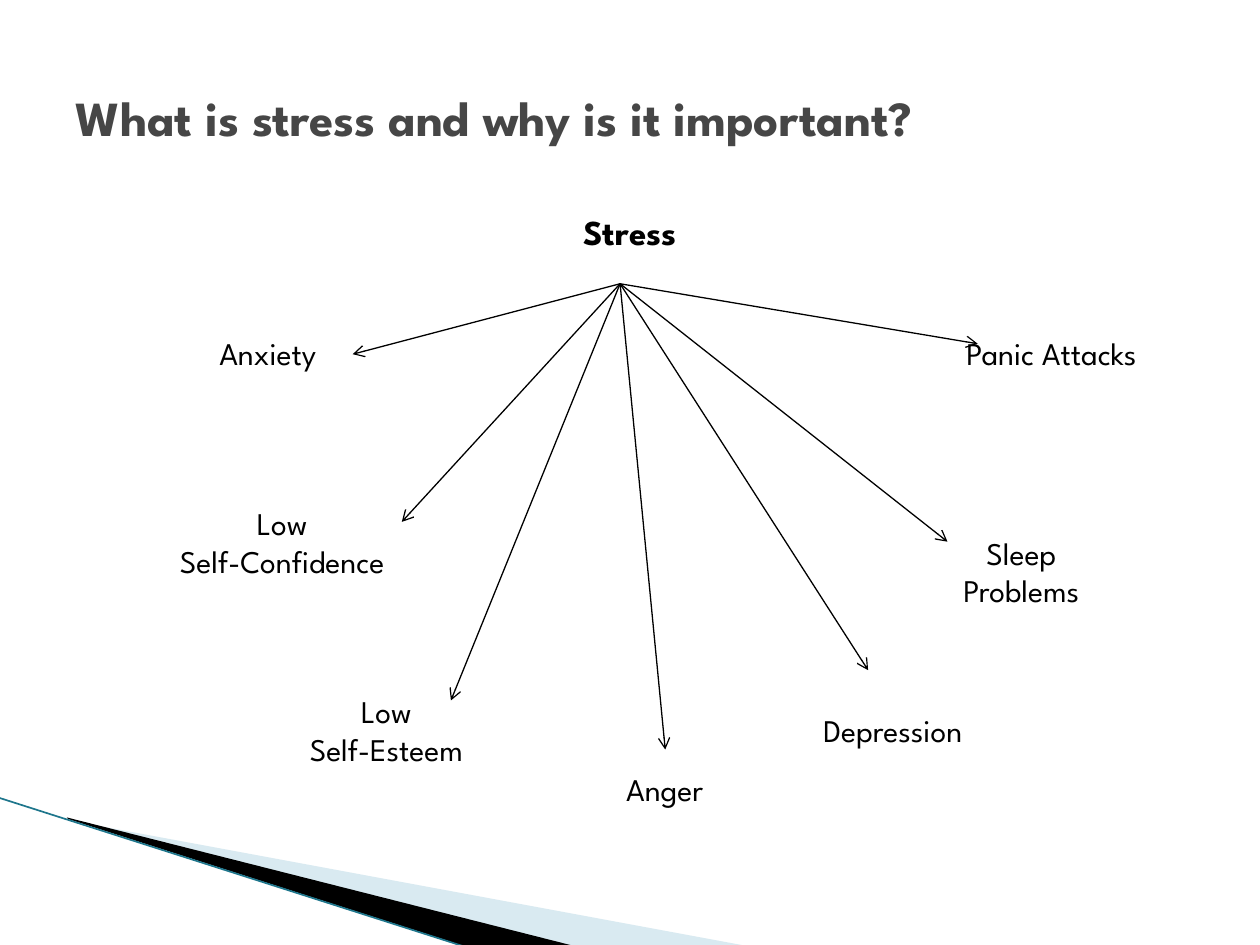
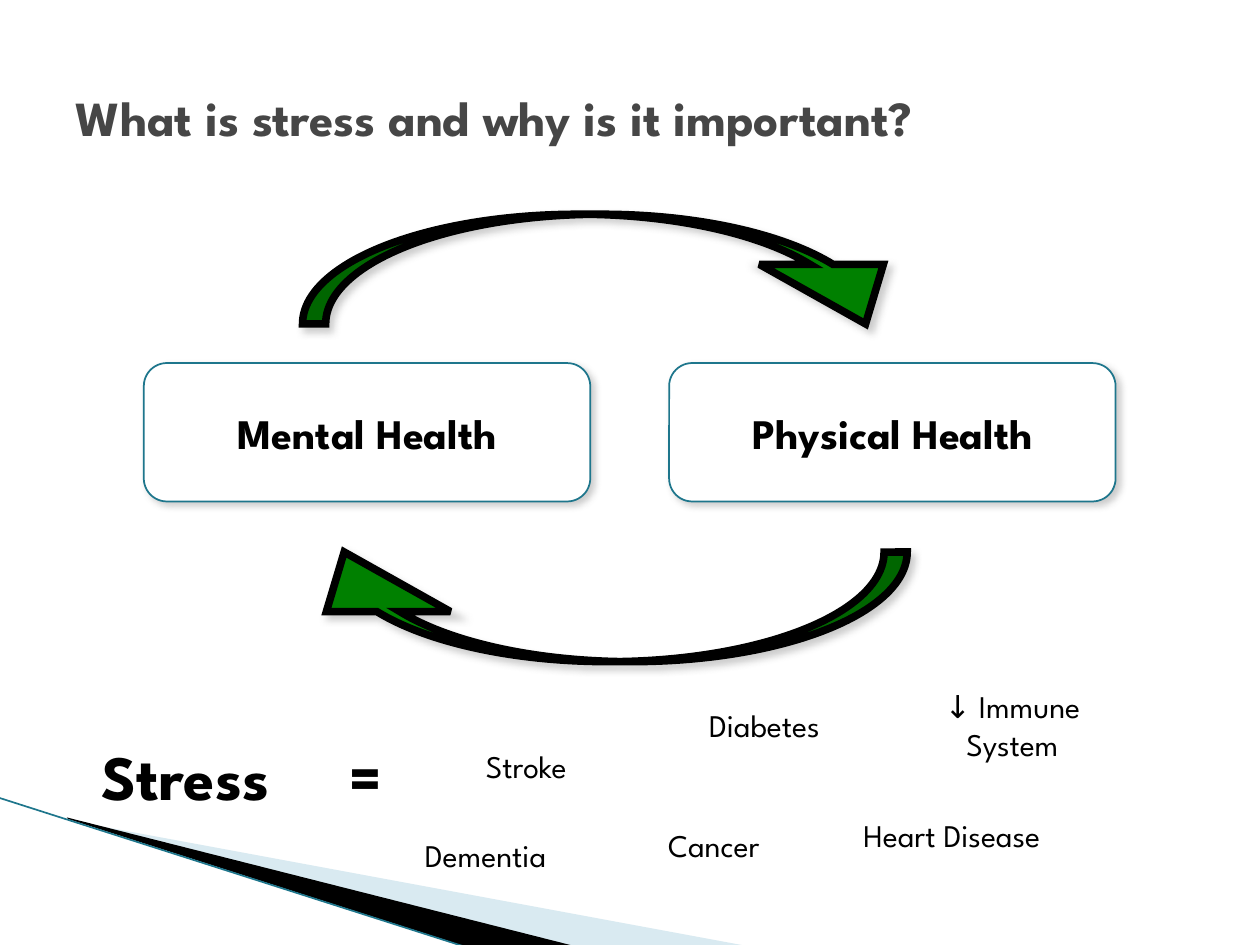
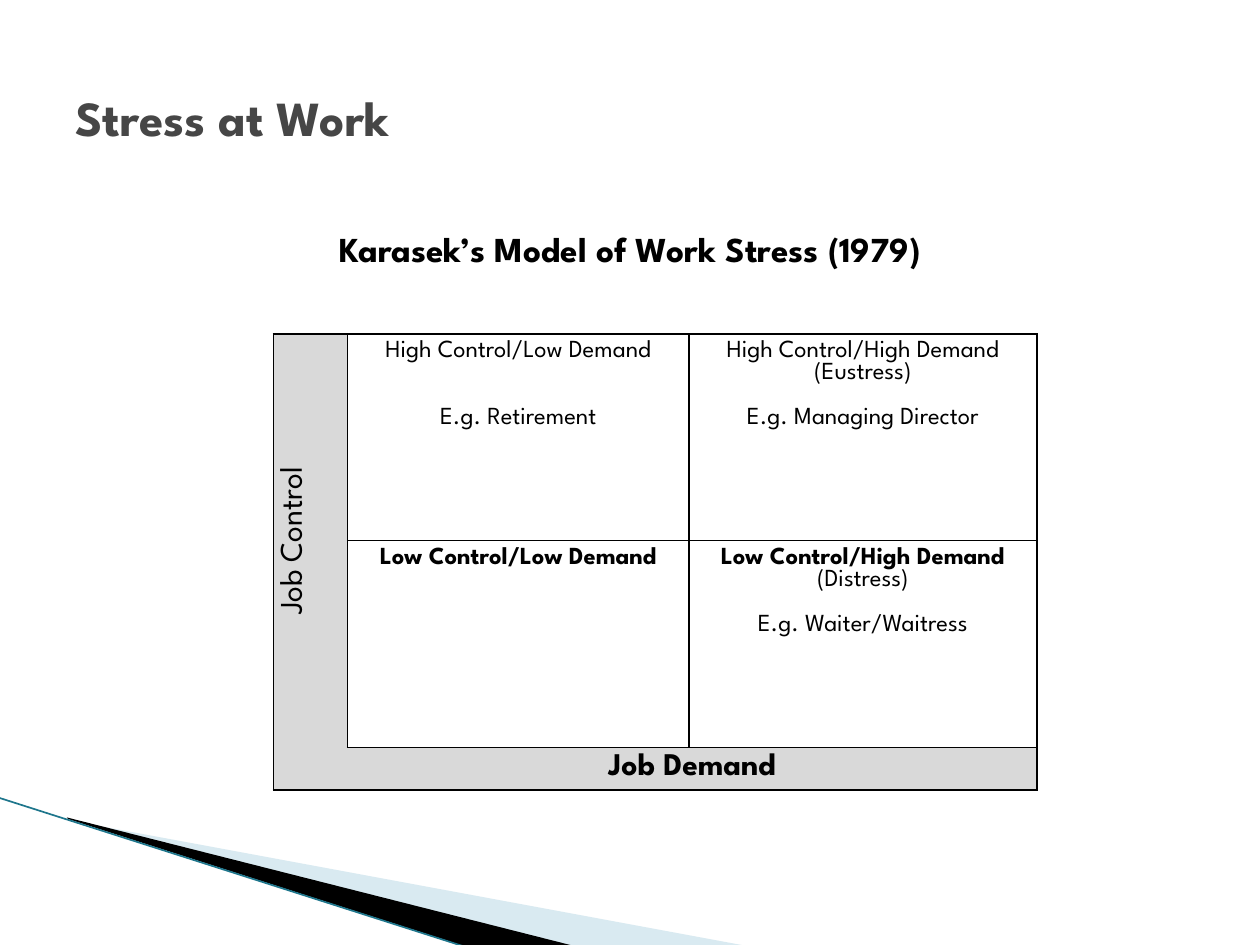
from dataclasses import dataclass

from lxml import etree
from pptx import Presentation
from pptx.dml.color import RGBColor
from pptx.enum.shapes import MSO_CONNECTOR, MSO_SHAPE
from pptx.enum.text import MSO_ANCHOR, MSO_AUTO_SIZE, PP_ALIGN
from pptx.oxml.ns import qn
from pptx.util import Cm, Pt

STRAIGHT = MSO_CONNECTOR.STRAIGHT
ROUNDED_BOX = MSO_SHAPE.ROUNDED_RECTANGLE
CURVED_ARROW = MSO_SHAPE.CURVED_DOWN_ARROW
TOP, MIDDLE = MSO_ANCHOR.TOP, MSO_ANCHOR.MIDDLE
LEFT, CENTER = PP_ALIGN.LEFT, PP_ALIGN.CENTER
NO_AUTOFIT = MSO_AUTO_SIZE.NONE
TITLE_AND_CONTENT, TITLE_ONLY = 1, 5
PLAIN_TABLE = "{2D5ABB26-0587-4C30-8999-92F81FD0307C}"


@dataclass(frozen=True)
class Theme:
    font: str = "League Spartan"
    ink: str = "000000"
    heading: str = "464646"
    paper: str = "FFFFFF"
    teal: str = "1E768C"
    pale_blue: str = "A0CBDC"
    green: str = "008000"
    grey: str = "D9D9D9"
    shadow: str = "808080"
    title_size: float = 28
    lead_size: float = 20
    label_size: float = 18
    box_size: float = 24
    stress_size: float = 36
    cell_size: float = 14
    line_height: float = 1.2
    table_line_height: float = 0.92


def rgb(value):
    return RGBColor.from_string(value)


def add_element(parent, tag, **attributes):
    return etree.SubElement(
        parent, qn(tag), {name: str(value) for name, value in attributes.items()})


class Deck:
    def __init__(self, theme):
        self.theme = theme
        self.presentation = Presentation()
        self.presentation.slide_width = Cm(25.4)
        self.presentation.slide_height = Cm(19.05)
        self.slide = None

    def add_slide(self, title, layout=TITLE_AND_CONTENT):
        layouts = self.presentation.slide_layouts
        self.slide = self.presentation.slides.add_slide(layouts[layout])
        self.add_corner_bands()
        self.fill_placeholder(self.slide.shapes.title, title, (1.27, 0.76, 22.86, 3.18),
                              self.theme.title_size, self.theme.heading, LEFT, MIDDLE)

    def add_corner_bands(self):
        theme = self.theme
        pale_band = self.add_polygon(
            [(1.4, 16.54), (15.11, 19.08), (11.58, 19.08), (1.4, 16.51)], theme.pale_blue)
        color = pale_band._element.spPr.find(qn("a:solidFill"))[0]
        add_element(color, "a:alpha", val=40000)
        self.add_polygon(
            [(1.35, 16.48), (11.61, 19.08), (9.45, 19.1), (1.37, 16.51)], theme.ink)
        self.add_line((-0.03, 16.08), (9.42, 19.1), theme.teal, 0.95)

    def add_polygon(self, points, color):
        corners = [(Cm(x), Cm(y)) for x, y in points]
        builder = self.slide.shapes.build_freeform(*corners[0])
        builder.add_line_segments(corners[1:])
        shape = builder.convert_to_shape()
        shape.shadow.inherit = False
        shape.fill.solid()
        shape.fill.fore_color.rgb = rgb(color)
        shape.line.fill.background()
        return shape

    def add_line(self, start, end, color, width):
        line = self.slide.shapes.add_connector(
            STRAIGHT, *(Cm(value) for value in (*start, *end)))
        line.line.color.rgb = rgb(color)
        line.line.width = Pt(width)
        add_element(line._element.spPr, "a:effectLst")
        return line

    def add_arrow(self, start, end):
        arrow = self.add_line(start, end, self.theme.ink, 0.75)
        add_element(arrow.line._get_or_add_ln(), "a:tailEnd", type="arrow")

    def format_paragraph(self, paragraph, size, bold=False, color=None,
                         alignment=CENTER, line_height=None):
        """Exact line spacing keeps the leading the same for every font build."""
        paragraph.alignment = alignment
        paragraph.line_spacing = Pt(round(size * (line_height or self.theme.line_height), 1))
        font = paragraph.font
        font.name = self.theme.font
        font.size = Pt(size)
        font.bold = bold
        font.color.rgb = rgb(color or self.theme.ink)

    def set_text(self, frame, text, size, tab=None, **style):
        frame.word_wrap = True
        frame.text = text
        for paragraph in frame.paragraphs:
            if tab:
                tabs = add_element(paragraph._p.get_or_add_pPr(), "a:tabLst")
                add_element(tabs, "a:tab", pos=Cm(tab), algn="l")
            self.format_paragraph(paragraph, size, **style)

    def fill_placeholder(self, shape, text, box, size, color, alignment, anchor):
        shape.left, shape.top, shape.width, shape.height = (Cm(value) for value in box)
        frame = shape.text_frame
        frame.auto_size = NO_AUTOFIT
        frame.vertical_anchor = anchor
        frame.text = text
        paragraph = frame.paragraphs[0]
        properties = paragraph._p.get_or_add_pPr()
        properties.set("marL", "0")
        properties.set("indent", "0")
        add_element(properties, "a:buNone")
        paragraph.space_before = Pt(0)
        self.format_paragraph(paragraph, size, True, color, alignment)

    def add_lead(self, text, box):
        self.fill_placeholder(self.slide.placeholders[1], text, box,
                              self.theme.lead_size, self.theme.ink, CENTER, TOP)

    def add_label(self, text, left, top, width=4.6, height=1.6, size=None, **style):
        shape = self.slide.shapes.add_textbox(Cm(left), Cm(top), Cm(width), Cm(height))
        shape.text_frame.vertical_anchor = MIDDLE
        self.set_text(shape.text_frame, text, size or self.theme.label_size, **style)

    def add_shadowed_shape(self, kind, box, fill, line, width, adjustments):
        shape = self.slide.shapes.add_shape(kind, *(Cm(value) for value in box))
        for index, value in enumerate(adjustments):
            shape.adjustments[index] = value
        shape.fill.solid()
        shape.fill.fore_color.rgb = rgb(fill)
        shape.line.color.rgb = rgb(line)
        shape.line.width = Pt(width)
        add_element(shape.line._get_or_add_ln(), "a:miter", lim=800000)
        shape.shadow.inherit = False
        effects = shape._element.spPr.find(qn("a:effectLst"))
        shadow = add_element(effects, "a:outerShdw", blurRad=Pt(4), dist=Pt(3),
                             dir=45 * 60000, algn="tl", rotWithShape=0)
        color = add_element(shadow, "a:srgbClr", val=self.theme.shadow)
        add_element(color, "a:alpha", val=40000)
        return shape

    def add_box(self, text, left, top):
        theme = self.theme
        shape = self.add_shadowed_shape(ROUNDED_BOX, (left, top, 9, 2.79),
                                        theme.paper, theme.teal, 1, [0.167])
        shape.text_frame.vertical_anchor = MIDDLE
        self.set_text(shape.text_frame, text, theme.box_size, bold=True)

    def add_curved_arrow(self, left, top, flipped=False):
        theme = self.theme
        shape = self.add_shadowed_shape(CURVED_ARROW, (left, top, 12.6, 2.21),
                                        theme.green, theme.ink, 4.33, [0.211, 1.131, 0.543])
        if flipped:
            for axis in ("flipH", "flipV"):
                shape._element.spPr.xfrm.set(axis, "1")

    def add_table(self, left, top, columns, rows):
        frame = self.slide.shapes.add_table(
            len(rows), len(columns), Cm(left), Cm(top), Cm(sum(columns)), Cm(sum(rows)))
        table = frame.table
        table.first_row = table.horz_banding = False
        table._tbl.tblPr.find(qn("a:tableStyleId")).text = PLAIN_TABLE
        for column, width in zip(table.columns, columns):
            column.width = Cm(width)
        for row, height in zip(table.rows, rows):
            row.height = Cm(height)
        return table

    def fill_cell(self, cell, lines=(("", False, 0),), size=None, sides="LRTB", fill=None):
        """Each line is its text, its weight and the number of lines left free above it."""
        theme = self.theme
        size = size or theme.cell_size
        properties = cell._tc.get_or_add_tcPr()
        for side in sides:
            border = add_element(properties, f"a:ln{side}", w=Pt(1))
            color = add_element(border, "a:solidFill")
            add_element(color, "a:srgbClr", val=theme.ink)
        if fill:
            cell.fill.solid()
            cell.fill.fore_color.rgb = rgb(fill)
        else:
            cell.fill.background()
        cell.text_frame.text = "\n".join(text for text, _, _ in lines)
        for paragraph, (_, bold, gap) in zip(cell.text_frame.paragraphs, lines):
            if gap:
                paragraph.space_before = Pt(round(gap * size * theme.table_line_height, 1))
            self.format_paragraph(paragraph, size, bold, line_height=theme.table_line_height)


def add_effects_slide(deck):
    deck.add_slide("What is stress and why is it important?")
    deck.add_lead("Stress", (1.27, 4.11, 22.86, 12.57))
    effects = [
        ("Anxiety", (3.1, 6.32), (7.11, 7.14)),
        ("Low\nSelf-Confidence", (2.69, 9.93, 6, 2), (8.1, 10.52)),
        ("Low\nSelf-Esteem", (5.49, 13.92), (9.09, 14.12)),
        ("Anger", (11.1, 15.11), (13.41, 15.11)),
        ("Depression", (15.7, 13.92), (17.5, 13.51)),
        ("Sleep\nProblems", (18.29, 10.72), (19.1, 10.92)),
        ("Panic Attacks", (18.9, 6.32), (19.71, 6.93)),
    ]
    for text, box, tip in effects:
        deck.add_label(text, *box)
        deck.add_arrow((12.5, 5.72), tip)


def add_health_slide(deck):
    deck.add_slide("What is stress and why is it important?", TITLE_ONLY)
    deck.add_box("Mental Health", 2.9, 7.32)
    deck.add_box("Physical Health", 13.49, 7.32)
    deck.add_curved_arrow(6.1, 4.32)
    deck.add_curved_arrow(5.69, 11.13, flipped=True)
    deck.add_label("Stress\t=", 1.8, 14.53, 6.5, 2.21, deck.theme.stress_size,
                   tab=5, bold=True, alignment=LEFT)
    illnesses = [
        ("Cancer", 12.09, 15.93),
        ("Diabetes", 13.11, 13.51),
        ("Stroke", 8.31, 14.33),
        ("Heart Disease", 16.89, 15.72),
        ("Dementia", 7.49, 16.13),
        ("↓ Immune System", 18.11, 13.51),
    ]
    for text, left, top in illnesses:
        deck.add_label(text, left, top, height=2.21)


def add_work_slide(deck):
    deck.add_slide("Stress at Work")
    deck.add_lead("Karasek’s Model of Work Stress (1979)", (3.89, 4.45, 17.63, 10.08))
    table = deck.add_table(5.51, 6.73, [1.5, 6.88, 7.01], [4.17, 4.17, 0.86])
    table.cell(0, 0).merge(table.cell(1, 0))
    table.cell(2, 1).merge(table.cell(2, 2))

    quadrants = {
        (0, 1): [("High Control/Low Demand", False, 0), ("E.g. Retirement", False, 2)],
        (0, 2): [("High Control/High Demand", False, 0), ("(Eustress)", False, 0),
                 ("E.g. Managing Director", False, 1)],
        (1, 1): [("Low Control/Low Demand", True, 0)],
        (1, 2): [("Low Control/High Demand", True, 0), ("(Distress)", False, 0),
                 ("E.g. Waiter/Waitress", False, 1)],
    }
    for position, lines in quadrants.items():
        deck.fill_cell(table.cell(*position), lines)

    axis = {"size": deck.theme.label_size, "fill": deck.theme.grey}
    control = table.cell(0, 0)
    deck.fill_cell(control, [("Job Control", False, 0)], sides="LRT", **axis)
    control._tc.tcPr.set("vert", "vert270")
    deck.fill_cell(table.cell(1, 0), sides="LR", **axis)
    deck.fill_cell(table.cell(2, 0), sides="LB", **axis)
    deck.fill_cell(table.cell(2, 1), [("Job Demand", True, 0)], sides="RTB", **axis)
    deck.fill_cell(table.cell(2, 2), sides="RTB", **axis)


def main():
    deck = Deck(Theme())
    add_effects_slide(deck)
    add_health_slide(deck)
    add_work_slide(deck)
    deck.presentation.save("out.pptx")


if __name__ == "__main__":
    main()
